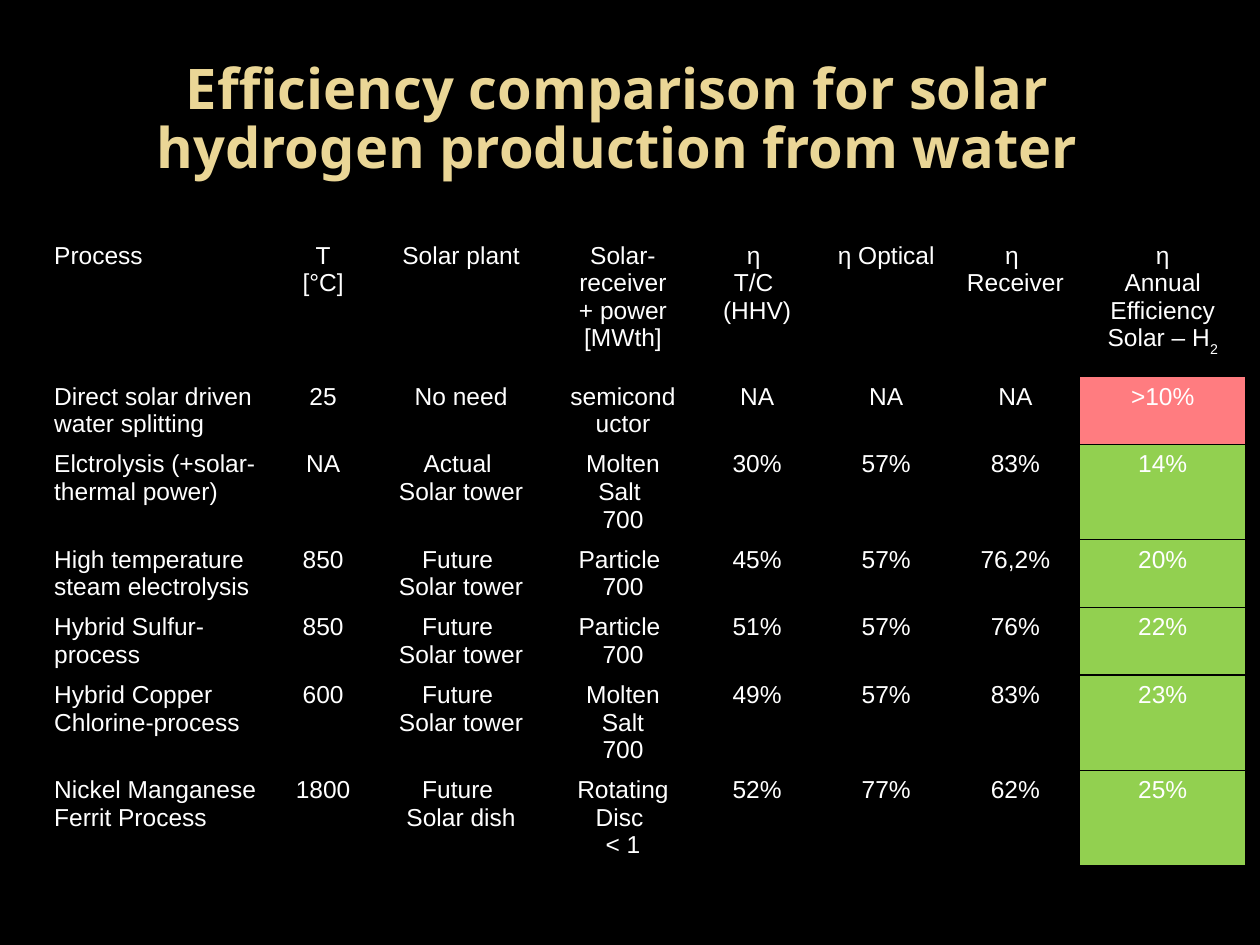
import dataclasses

import pptx
import pptx.dml.color
import pptx.enum.text
import pptx.oxml
import pptx.oxml.ns
import pptx.util

Inches = pptx.util.Inches
Pt = pptx.util.Pt
RGB = pptx.dml.color.RGBColor.from_string
ALIGN = pptx.enum.text.PP_ALIGN


@dataclasses.dataclass(frozen=True)
class Theme:
    background: str = "000000"
    title: str = "EAD696"
    text: str = "FFFFFF"
    border: str = "000000"
    low: str = "FF7C80"
    high: str = "92D050"
    title_font: str = "Noto Sans"
    table_font: str = "Arial"
    title_size: int = 32
    table_size: int = 14
    border_width: int = 1


THEME = Theme()

COLUMN_WIDTHS = [1.87, 0.73, 1.46, 1.11, 1.02, 1.03, 1.02, 1.32]
HEADER_HEIGHT, ROW_HEIGHT = 1.12, 0.5

# "\v" breaks a line, "\n" starts a paragraph
HEADER = ["Process", "T\v[°C]", "Solar plant", "Solar-receiver\v+ power [MWth]",
          "η \vT/C \n(HHV)", "η Optical", "η \vReceiver",
          "η\vAnnual Efficiency\nSolar – H"]
PROCESSES = [
    ["Direct solar driven water splitting", "25", "No need", "semiconductor",
     "NA", "NA", "NA", ">10%"],
    ["Elctrolysis (+solar-thermal power)", "NA", "Actual \vSolar tower",
     "Molten Salt \v700", "30%", "57%", "83%", "14%"],
    ["High temperature steam electrolysis", "850", "Future \nSolar tower",
     "Particle \v700", "45%", "57%", "76,2%", "20%"],
    ["Hybrid Sulfur-process", "850", "Future \vSolar tower",
     "Particle \v700", "51%", "57%", "76%", "22%"],
    ["Hybrid Copper Chlorine-process", "600", "Future \vSolar tower",
     "Molten Salt\n700", "49%", "57%", "83%", "23%"],
    ["Nickel Manganese Ferrit Process", "1800", "Future \vSolar dish",
     "Rotating Disc \v< 1", "52%", "77%", "62%", "25%"],
]


def style_paragraph(paragraph, font, size, color, align, bold=False):
    paragraph.alignment = align
    paragraph.font.name = font
    paragraph.font.size = Pt(size)
    paragraph.font.bold = bold
    paragraph.font.color.rgb = RGB(color)


def set_title(slide, text):
    title = slide.shapes.title
    title.left, title.top = Inches(0.5), Inches(0.5)
    title.width, title.height = Inches(8.8), Inches(0.92)
    frame = title.text_frame
    frame.text = text
    frame.word_wrap = True
    frame.auto_size = pptx.enum.text.MSO_AUTO_SIZE.NONE
    frame.vertical_anchor = pptx.enum.text.MSO_ANCHOR.MIDDLE
    heading = frame.paragraphs[0]
    style_paragraph(heading, THEME.title_font, THEME.title_size, THEME.title,
                    ALIGN.CENTER, bold=True)
    heading.line_spacing = 0.88


def set_borders(cell):
    properties = cell._tc.get_or_add_tcPr()
    for position, side in enumerate(("lnL", "lnR", "lnT", "lnB")):
        properties.insert(position, pptx.oxml.parse_xml(
            f'<a:{side} {pptx.oxml.ns.nsdecls("a")} w="{Pt(THEME.border_width)}">'
            f'<a:solidFill><a:srgbClr val="{THEME.border}"/></a:solidFill></a:{side}>'))


def fill_cell(cell, text, align, fill=None):
    cell.text = text
    for paragraph in cell.text_frame.paragraphs:
        style_paragraph(paragraph, THEME.table_font, THEME.table_size,
                        THEME.text, align)
    set_borders(cell)
    if fill:
        cell.fill.solid()
        cell.fill.fore_color.rgb = RGB(fill)
    else:
        cell.fill.background()


def add_subscript(paragraph, text):
    run = paragraph.add_run()
    run.text = text
    run._r.get_or_add_rPr().set("baseline", "-30000")


def annual_fill(row, column):
    if row == 0 or column < len(HEADER) - 1:
        return None
    return THEME.low if row == 1 else THEME.high


def add_efficiency_table(slide):
    rows = [HEADER] + PROCESSES
    height = HEADER_HEIGHT + ROW_HEIGHT * len(PROCESSES)
    table = slide.shapes.add_table(
        len(rows), len(HEADER), Inches(0.33), Inches(1.87),
        Inches(sum(COLUMN_WIDTHS)), Inches(height)).table
    table.first_row = table.horz_banding = False
    for column, width in zip(table.columns, COLUMN_WIDTHS):
        column.width = Inches(width)
    for index, row in enumerate(table.rows):
        row.height = Inches(ROW_HEIGHT if index else HEADER_HEIGHT)
    for r, texts in enumerate(rows):
        for c, text in enumerate(texts):
            fill_cell(table.cell(r, c), text, ALIGN.CENTER if c else ALIGN.LEFT,
                      annual_fill(r, c))
    annual_header = table.cell(0, len(HEADER) - 1)
    add_subscript(annual_header.text_frame.paragraphs[-1], "2")


def main():
    deck = pptx.Presentation()
    deck.slide_width, deck.slide_height = Inches(10), Inches(7.5)

    # Title-only slide on a dark background
    slide = deck.slides.add_slide(deck.slide_layouts[5])
    slide.background.fill.solid()
    slide.background.fill.fore_color.rgb = RGB(THEME.background)

    # Heading and comparison table
    set_title(slide, "Efficiency comparison for solar hydrogen production from water")
    add_efficiency_table(slide)

    deck.save("out.pptx")


if __name__ == "__main__":
    main()
